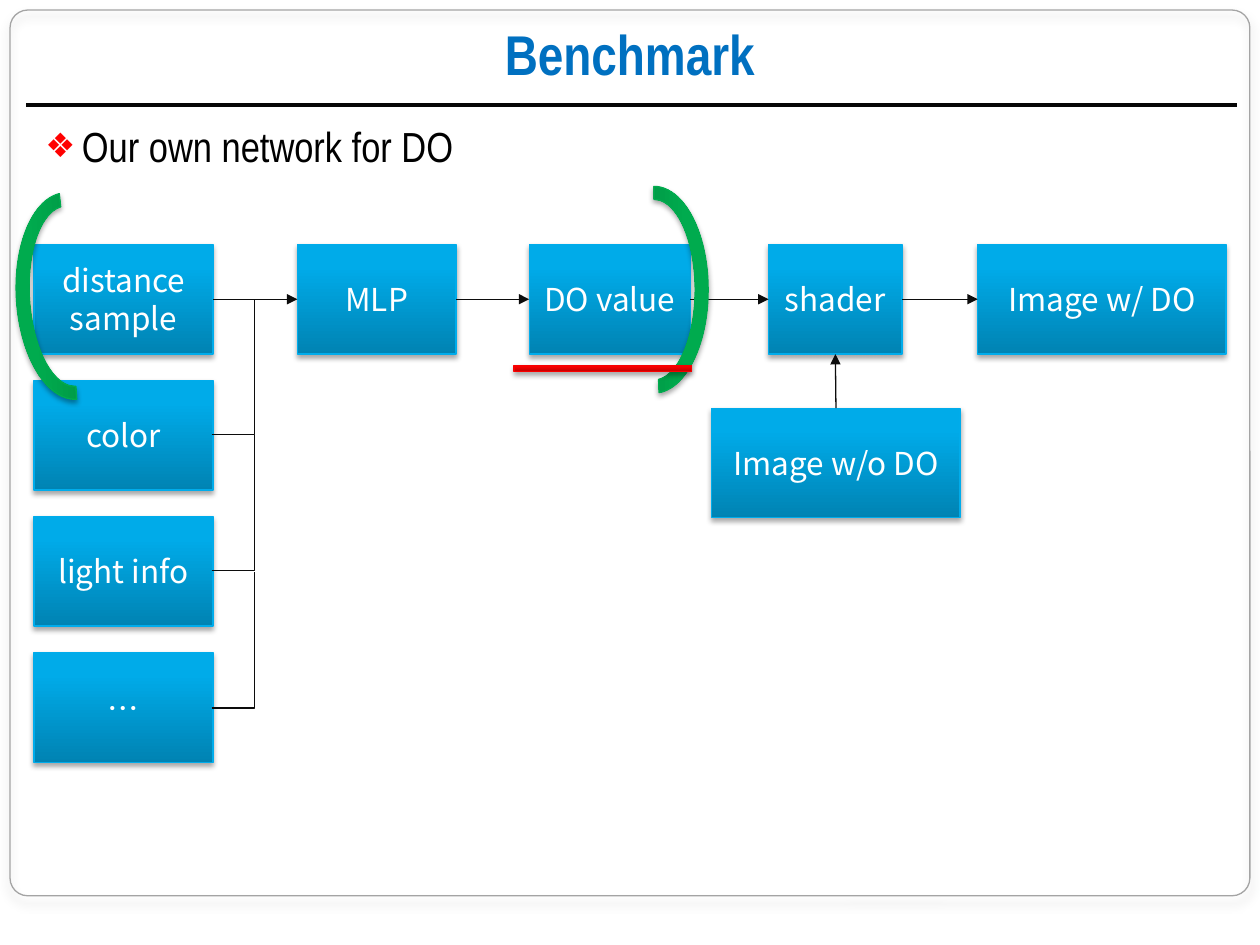
"""Build the Benchmark slide: a flow from network inputs to the shaded image."""
from pptx import Presentation
from pptx.dml.color import RGBColor
from pptx.enum.shapes import MSO_CONNECTOR, MSO_SHAPE
from pptx.enum.text import MSO_ANCHOR, PP_ALIGN
from pptx.oxml import parse_xml
from pptx.oxml.ns import nsdecls
from pptx.util import Inches, Pt

RECT, ROUND, ARC = MSO_SHAPE.RECTANGLE, MSO_SHAPE.ROUNDED_RECTANGLE, MSO_SHAPE.BLOCK_ARC
STRAIGHT, ELBOW = MSO_CONNECTOR.STRAIGHT, MSO_CONNECTOR.ELBOW
CENTER, MIDDLE = PP_ALIGN.CENTER, MSO_ANCHOR.MIDDLE
TOP, LEFT, BOTTOM, RIGHT = range(4)
NS = nsdecls("a")

THEME = {
    "blue": ("0083B3", "00ABE9", "00ABEA", "00ACEB"),
    "green": ("00833C", "00AB4E", "00AB4E", "00AC4E"),
    "red": ("BE0000", "F70000", "F80000", "F90000"),
    "title": RGBColor(0x00, 0x70, 0xC0),
    "text": RGBColor(0, 0, 0),
    "label": RGBColor(255, 255, 255),
    "link": RGBColor(0x0C, 0x0C, 0x0C),
    "rule": RGBColor(0x06, 0x06, 0x06),
    "frame": RGBColor(0xA4, 0xA4, 0xA4),
    "bullet": "FF0000",
    "head font": "Arial Narrow",
    "box font": "Noto Sans CJK KR",
    "title size": Pt(32),
    "body size": Pt(24),
    "box size": Pt(18),
    "thin": Pt(0.75),
    "thick": Pt(2.25),
}
SHADOW = (
    '<a:effectLst {}><a:outerShdw blurRad="{}" dist="{}" dir="5400000" rotWithShape="0">'
    '<a:srgbClr val="000000"><a:alpha val="{}"/></a:srgbClr></a:outerShdw></a:effectLst>'
)


def paint(shape, tone):
    low, mid, high, edge = THEME[tone]
    stops = "".join(
        f'<a:gs pos="{pos}"><a:srgbClr val="{color}"/></a:gs>'
        for pos, color in ((0, low), (80000, mid), (100000, high))
    )
    props = shape._element.spPr
    props.append(parse_xml(
        f'<a:gradFill {NS} rotWithShape="1"><a:gsLst>{stops}</a:gsLst>'
        '<a:lin ang="16200000" scaled="0"/></a:gradFill>'
    ))
    shape.line.color.rgb = RGBColor.from_string(edge)
    shape.line.width = THEME["thin"]
    props.append(parse_xml(SHADOW.format(NS, Pt(3.1), Pt(1.8), 35000)))


def draw(kind, ends, color, width, arrow=False):
    line = slide.shapes.add_connector(kind, *[Inches(v) for v in ends])
    line.line.color.rgb = color
    line.line.width = width
    if arrow:
        line.line._get_or_add_ln().append(parse_xml(f'<a:tailEnd {NS} type="triangle"/>'))
    line._element.spPr.append(parse_xml(f"<a:effectLst {NS}/>"))
    return line


deck = Presentation()
deck.slide_width, deck.slide_height = Inches(10), Inches(7.5)
slide = deck.slides.add_slide(deck.slide_layouts[1])

title, body = slide.shapes.title, slide.placeholders[1]
for holder, place, words, size, color in (
    (title, (0, 0, 10, 0.84), "Benchmark", "title size", "title"),
    (body, (0.16, 0.86, 9.69, 6.17), "Our own network for DO", "body size", "text"),
):
    holder.left, holder.top, holder.width, holder.height = [Inches(v) for v in place]
    holder.text_frame.text = words
    para = holder.text_frame.paragraphs[0]
    para.space_before = Pt(0)
    if holder is body:
        props = para._p.get_or_add_pPr()
        props.set("marL", str(Inches(0.29)))
        props.set("indent", str(-Inches(0.29)))
        for mark in (
            f'<a:buClr {NS}><a:srgbClr val="{THEME["bullet"]}"/></a:buClr>',
            f'<a:buSzPct {NS} val="80000"/>',
            f'<a:buChar {NS} char="❖"/>',
        ):
            props.append(parse_xml(mark))
    font = para.runs[0].font
    font.name, font.size = THEME["head font"], THEME[size]
    font.color.rgb = THEME[color]
    font.bold = holder is title
title.text_frame.vertical_anchor = MIDDLE
title.text_frame.paragraphs[0].alignment = CENTER
frame = body.text_frame
frame.vertical_anchor = MSO_ANCHOR.TOP
frame.margin_left, frame.margin_top = Inches(0.2), Inches(0.1)
frame.margin_right, frame.margin_bottom = Inches(0.1), Inches(0.05)

draw(STRAIGHT, (0.21, 0.83, 9.82, 0.83), THEME["rule"], THEME["thick"])
border = slide.shapes.add_shape(ROUND, Inches(0.08), Inches(0.08), Inches(9.84), Inches(7.03))
border.adjustments[0] = 0.02
border.fill.background()
border.line.color.rgb = THEME["frame"]
border.line.width = THEME["thin"]
border._element.spPr.append(parse_xml(SHADOW.format(NS, Pt(6), Pt(4), 25000)))

row, step, high = 1.94, 1.08, 0.87
boxes = {}
for words, left, top, wide in (
    ("distance sample", 0.27, row, 1.42),
    ("MLP", 2.36, row, 1.26),
    ("DO value", 4.2, row, 1.28),
    ("shader", 6.1, row, 1.06),
    ("Image w/ DO", 7.76, row, 1.97),
    ("Image w/o DO", 5.65, 3.24, 1.97),
    ("color", 0.27, row + step, 1.42),
    ("light info", 0.27, row + 2 * step, 1.42),
    ("…", 0.27, row + 3 * step, 1.42),
):
    box = slide.shapes.add_shape(RECT, Inches(left), Inches(top), Inches(wide), Inches(high))
    paint(box, "blue")
    box.text_frame.text = words
    box.text_frame.vertical_anchor = MIDDLE
    para = box.text_frame.paragraphs[0]
    para.alignment = CENTER
    font = para.runs[0].font
    font.name, font.size = THEME["box font"], THEME["box size"]
    font.color.rgb = THEME["label"]
    boxes[words] = box

chain = ["distance sample", "MLP", "DO value", "shader", "Image w/ DO"]
links = [(a, RIGHT, b, LEFT) for a, b in zip(chain, chain[1:])]
for start, out, end, into in links + [("Image w/o DO", TOP, "shader", BOTTOM)]:
    arrow = draw(STRAIGHT, (0, 0, 1, 1), THEME["link"], THEME["thin"], True)
    arrow.begin_connect(boxes[start], out)
    arrow.end_connect(boxes[end], into)

for low in (3.45, 4.53, 5.62):
    bend = draw(ELBOW, (1.68, low, 2.02, low - step), THEME["link"], THEME["thin"])
    bend._element.spPr.prstGeom.set("prst", "bentConnector2")

for left, top, turn in ((-0.26, 1.92, 266.6), (4.37, 1.87, 90)):
    arc = slide.shapes.add_shape(ARC, Inches(left), Inches(top), Inches(1.64), Inches(0.86))
    arc.rotation = turn
    for i, value in enumerate((108, 214.27, 0.12)):
        arc.adjustments[i] = value
    paint(arc, "green")

bar = slide.shapes.add_shape(RECT, Inches(4.08), Inches(2.9), Inches(1.41), Inches(0.05))
paint(bar, "red")

deck.save("out.pptx")
